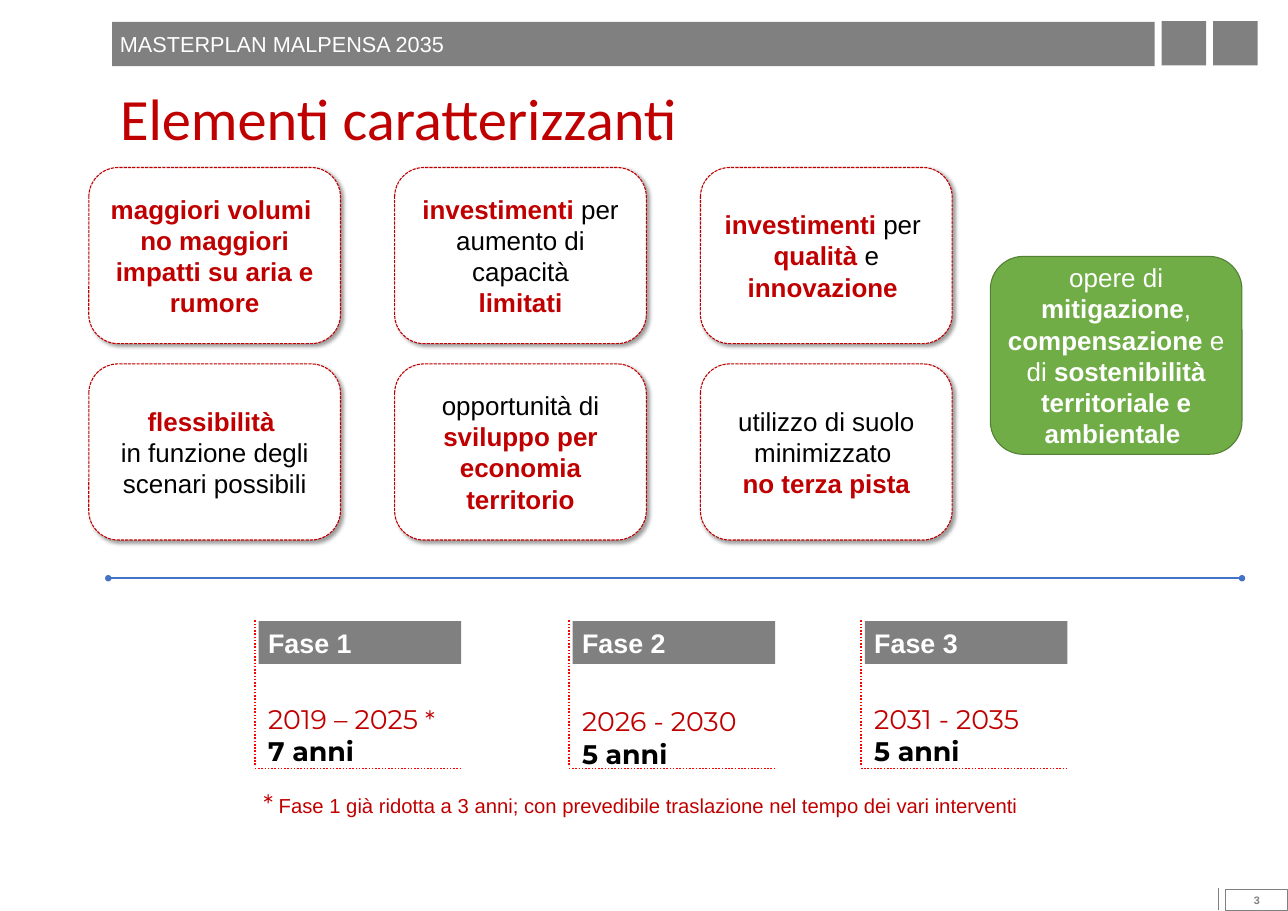
from lxml.etree import SubElement
from pptx import Presentation
from pptx.dml.color import RGBColor
from pptx.enum.dml import MSO_LINE_DASH_STYLE as DASH
from pptx.enum.shapes import MSO_CONNECTOR, MSO_SHAPE as SHAPE
from pptx.enum.text import MSO_ANCHOR as ANCHOR, MSO_AUTO_SIZE, PP_ALIGN as ALIGN
from pptx.oxml.ns import qn
from pptx.util import Inches, Pt

COLORS = {name: RGBColor.from_string(value) for name, value in {
    "red": "C00000", "dotted": "FF0000", "gray": "808080", "white": "FFFFFF",
    "black": "000000", "green": "70AD47", "dark green": "538035", "blue": "4472C4",
}.items()}

# Text styles: size, font, colour, bold
STYLES = {
    "title": (54, "Calibri", "red", False),
    "header": (20, "Arial", "white", False),
    "page": (10, "Arial", "gray", True),
    "key": (24, "Arial", "red", True),
    "plain": (24, "Arial", "black", False),
    "light": (24, "Arial", "white", False),
    "strong": (24, "Arial", "white", True),
    "phase": (24.8, "Arial", "white", True),
    "years": (24.8, "Montserrat", "red", False),
    "length": (24.8, "Montserrat", "black", True),
    "star": (23.4, "Montserrat", "red", False),
    "note": (18.7, "Arial", "red", False),
}

presentation = Presentation()
presentation.slide_width, presentation.slide_height = Inches(16.53), Inches(11.69)
slide = presentation.slides.add_slide(presentation.slide_layouts[5])


def add_block(place, paragraphs=(), kind=None, fill=None, outline=None,
              align=ALIGN.LEFT, inset=(0.1, 0.05)):
    """Add a shape, or a text box when no kind is given, with its styled runs."""
    box = [Inches(length) for length in place]
    if kind is None:
        shape = slide.shapes.add_textbox(*box)
    else:
        shape = slide.shapes.add_shape(kind, *box)
        shape.shadow.inherit = False
        if fill:
            shape.fill.solid()
            shape.fill.fore_color.rgb = COLORS[fill]
        else:
            shape.fill.background()
        if outline:
            shape.line.color.rgb = COLORS[outline]
            shape.line.width = Pt(1)
        else:
            shape.line.fill.background()
    frame = shape.text_frame
    frame.word_wrap = True
    frame.vertical_anchor = ANCHOR.MIDDLE
    frame.margin_left = frame.margin_right = Inches(inset[0])
    frame.margin_top = frame.margin_bottom = Inches(inset[1])
    for index, runs in enumerate(paragraphs):
        paragraph = frame.add_paragraph() if index else frame.paragraphs[0]
        paragraph.alignment = align
        for text, style in runs:
            run = paragraph.add_run()
            run.text = text
            size, run.font.name, color, run.font.bold = STYLES[style]
            run.font.size = Pt(size)
            run.font.color.rgb = COLORS[color]
    return shape


def add_line(left, top, right, bottom, color, width, dash=None):
    line = slide.shapes.add_connector(
        MSO_CONNECTOR.STRAIGHT, *[Inches(length) for length in (left, top, right, bottom)])
    line.line.color.rgb = COLORS[color]
    line.line.width = Pt(width)
    if dash:
        line.line.dash_style = dash
    properties = line.element.find(qn("p:spPr"))
    SubElement(properties, qn("a:effectLst"))
    return properties.find(qn("a:ln"))


# Title
title = slide.shapes.title
title.left, title.top, title.width, title.height = [
    Inches(length) for length in (1.44, 1, 14.26, 2.26)]
frame = title.text_frame
frame.auto_size = MSO_AUTO_SIZE.NONE
frame.vertical_anchor = ANCHOR.TOP
frame.paragraphs[0].alignment = ALIGN.LEFT
run = frame.paragraphs[0].add_run()
run.text = "Elementi caratterizzanti"
size, run.font.name, color, run.font.bold = STYLES["title"]
run.font.size = Pt(size)
run.font.color.rgb = COLORS[color]

# Header band and page number
add_block((1.44, 0.28, 13.38, 0.57), [[("MASTERPLAN MALPENSA 2035", "header")]],
          SHAPE.RECTANGLE, "gray")
for left in (14.91, 15.57):
    add_block((left, 0.27, 0.57, 0.57), kind=SHAPE.RECTANGLE, fill="gray")
add_block((15.73, 11.41, 0.8, 0.28), [[("3", "page")]], SHAPE.RECTANGLE,
          outline="gray", align=ALIGN.CENTER)
add_line(15.64, 11.4, 15.64, 11.68, "gray", 1)

# Cards on a grid of two rows and three columns
CARD_WIDTH, CARD_HEIGHT = 3.23, 2.26
cards = [
    [[("maggiori volumi ", "key")], [("no maggiori", "key")],
     [("impatti su aria e rumore", "key")]],
    [[("investimenti", "key"), (" per aumento di capacità", "plain")],
     [("limitati", "key")]],
    [[("investimenti ", "key"), ("per ", "plain")],
     [("qualità ", "key"), ("e", "plain"), (" innovazione ", "key")]],
    [[("flessibilità ", "key")], [("in funzione degli scenari possibili", "plain")]],
    [[("opportunità di ", "plain"), ("sviluppo per economia territorio", "key")]],
    [[("utilizzo di suolo minimizzato ", "plain")], [("no terza pista", "key")]],
]
for index, paragraphs in enumerate(cards):
    row, column = divmod(index, 3)
    card = add_block((1.14 + 3.925 * column, 2.15 + 2.52 * row, CARD_WIDTH, CARD_HEIGHT),
                     paragraphs, SHAPE.ROUNDED_RECTANGLE, "white", "red", ALIGN.CENTER)
    card.line.dash_style = DASH.SQUARE_DOT
    effects = card.element.find(qn("p:spPr")).find(qn("a:effectLst"))
    shadow = SubElement(effects, qn("a:outerShdw"), blurRad=str(Pt(4)), dist=str(Pt(3)),
                        dir="2700000", algn="tl", rotWithShape="0")
    shade = SubElement(shadow, qn("a:srgbClr"), val=str(COLORS["black"]))
    SubElement(shade, qn("a:alpha"), val="40000")

# Green card
add_block((12.71, 3.29, CARD_WIDTH, 2.54),
          [[("opere di ", "light"), ("mitigazione", "strong"), (",", "light")],
           [("compensazione", "strong"), (" e di ", "light"),
            ("sostenibilità territoriale e ambientale ", "strong")]],
          SHAPE.ROUNDED_RECTANGLE, "green", "dark green", ALIGN.CENTER)

# Divider with round ends
divider = add_line(1.39, 7.42, 15.94, 7.42, "blue", 1.5)
for end in ("a:headEnd", "a:tailEnd"):
    SubElement(divider, qn(end), type="oval")

# Phases: left, top of the text, name, years, length
WIDE_INSET = (0.12, 0.06)
phases = [
    (3.32, 8.62, "Fase 1", [("2019 – 2025 ", "years"), ("*", "star")], "7 anni"),
    (7.35, 8.65, "Fase 2", [("2026 - 2030", "years")], "5 anni"),
    (11.1, 8.62, "Fase 3", [("2031 - 2035", "years")], "5 anni"),
]
for left, text_top, name, years, length in phases:
    add_block((left, 7.97, 2.6, 0.55), [[(name, "phase")]], SHAPE.RECTANGLE, "gray",
              inset=WIDE_INSET)
    period = add_block((left, text_top, 2.94, 1.21), [years, [(length, "length")]],
                       inset=WIDE_INSET)
    period.text_frame.paragraphs[0].line_spacing = 2.0
    edge = left - 0.05
    add_line(edge, 7.96, edge, 9.83, "dotted", 1.5, DASH.ROUND_DOT)
    add_line(edge, 9.86, edge + 2.63, 9.86, "dotted", 1.5, DASH.ROUND_DOT)

# Footnote
add_block((3.26, 9.99, 10.7, 0.64),
          [[("*", "star"), (" ", "note"),
            ("Fase 1 già ridotta a 3 anni; con prevedibile traslazione nel tempo"
             " dei vari interventi", "note")]], inset=WIDE_INSET)

presentation.save("out.pptx")
